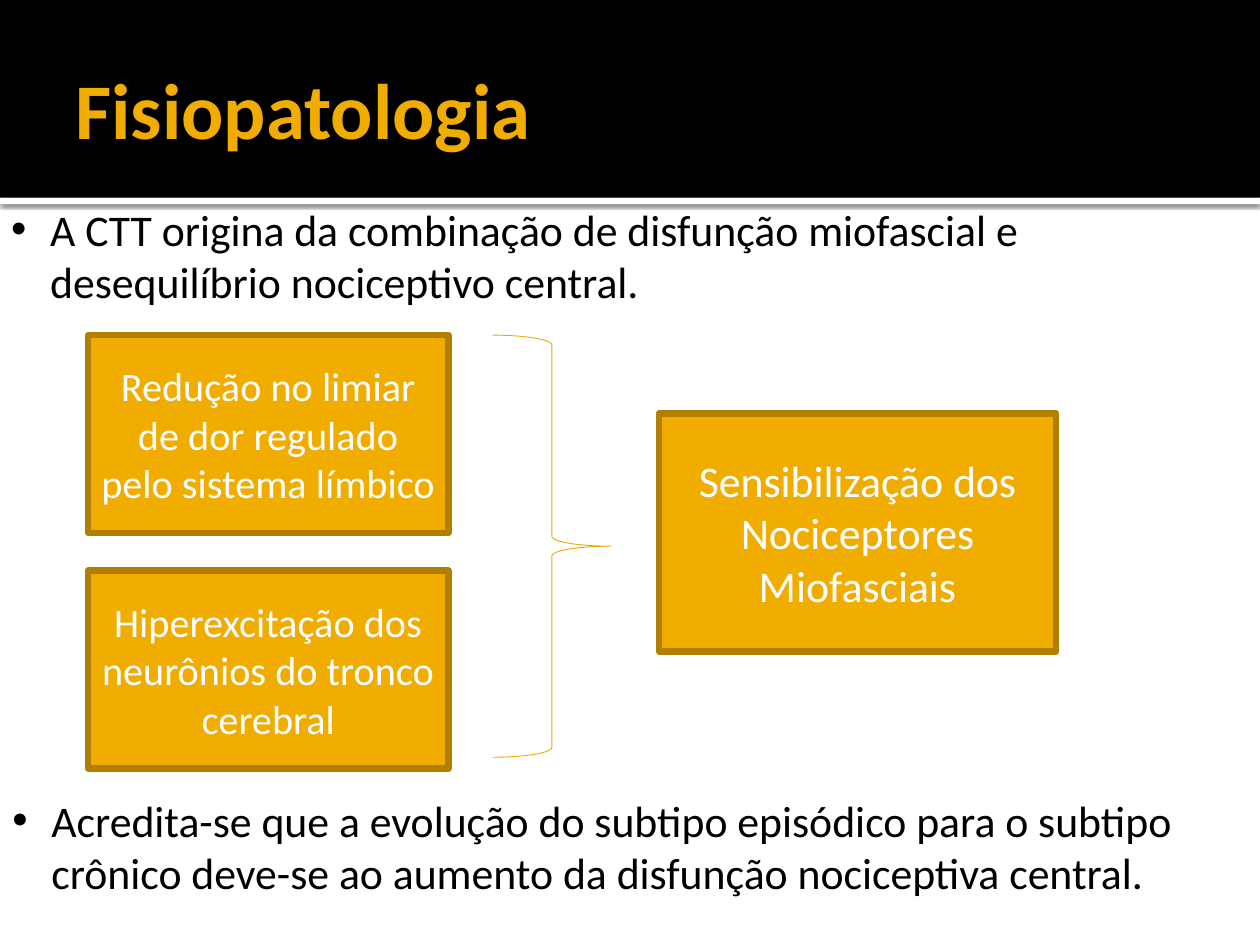
from lxml import etree
from pptx import Presentation
from pptx.dml.color import RGBColor
from pptx.enum.shapes import MSO_SHAPE as Shape
from pptx.enum.text import MSO_ANCHOR as Anchor, MSO_AUTO_SIZE as AutoSize, PP_ALIGN as Align
from pptx.oxml import parse_xml
from pptx.oxml.ns import nsdecls, qn
from pptx.util import Inches, Pt

BLACK, WHITE, GOLD = "000000", "FFFFFF", "F0AD00"
DARK_GOLD, BRACE_GOLD = "B28000", "EBA900"


def color(value):
    return RGBColor.from_string(value)


class SlideBuilder:
    """Draws styled elements on the current slide."""

    font = "Calibri"

    def __init__(self, page):
        self.page = page

    def set_text(self, shape, text, size, ink, align, bold=False):
        frame = shape.text_frame
        frame.word_wrap = True
        frame.text = text
        para = frame.paragraphs[0]
        para.alignment = align
        span = para.runs[0].font
        span.name, span.size, span.bold = self.font, Pt(size), bold
        span.color.rgb = color(ink)
        return para

    def shape(self, kind, left, top, width, height, fill=None, line=None, weight=0):
        shape = self.page.shapes.add_shape(
            kind, Inches(left), Inches(top), Inches(width), Inches(height))
        shape.shadow.inherit = False
        if fill:
            shape.fill.solid()
            shape.fill.fore_color.rgb = color(fill)
        else:
            shape.fill.background()
        if line:
            shape.line.color.rgb = color(line)
            shape.line.width = Pt(weight)
        else:
            shape.line.fill.background()
        return shape

    def header(self, height, strip):
        edge = self.shape(Shape.RECTANGLE, 0, height, 10, strip, WHITE)
        effects = edge._element.spPr.find(qn("a:effectLst"))
        effects.append(parse_xml(
            f'<a:outerShdw {nsdecls("a")} blurRad="{Pt(2.5)}" dist="{Pt(0.8)}" '
            'dir="5400000" rotWithShape="0"/>'))
        ink = etree.SubElement(effects[0], qn("a:srgbClr"), val=BLACK)
        etree.SubElement(ink, qn("a:alpha"), val="60000")
        self.shape(Shape.RECTANGLE, 0, 0, 10, height, BLACK)

    def title(self, text):
        title = self.page.shapes.title
        title.left, title.top = Inches(0.5), Inches(0.17)
        title.width, title.height = Inches(9), Inches(1.37)
        self.page.shapes._spTree.append(title._element)
        self.set_text(title, text, 45, GOLD, Align.LEFT, bold=True)
        frame = title.text_frame
        frame.auto_size = AutoSize.NONE
        frame.vertical_anchor = Anchor.MIDDLE
        frame.margin_left = Inches(0.1)
        frame.margin_right = frame.margin_top = frame.margin_bottom = Inches(0.05)

    def bullet(self, text, left, top, width, height):
        box = self.page.shapes.add_textbox(
            Inches(left), Inches(top), Inches(width), Inches(height))
        para = self.set_text(box, text, 25, BLACK, Align.LEFT)
        settings = para._p.get_or_add_pPr()
        settings.set("marL", str(Inches(0.31)))
        settings.set("indent", str(-Inches(0.31)))
        etree.SubElement(settings, qn("a:buFont"), typeface="Arial")
        etree.SubElement(settings, qn("a:buChar"), char="•")

    def card(self, text, left, top, width, height, size):
        card = self.shape(Shape.RECTANGLE, left, top, width, height, GOLD, DARK_GOLD, 3.78)
        self.set_text(card, text, size, WHITE, Align.CENTER)
        card.text_frame.vertical_anchor = Anchor.MIDDLE

    def brace(self, left, top, width, height):
        self.shape(Shape.RIGHT_BRACE, left, top, width, height, line=BRACE_GOLD, weight=0.5)


def main():
    deck = Presentation()
    deck.slide_width, deck.slide_height = Inches(10), Inches(7.5)
    slide = SlideBuilder(deck.slides.add_slide(deck.slide_layouts[5]))

    slide.header(1.57, 0.05)
    slide.title("Fisiopatologia")
    slide.bullet("A CTT origina da combinação de disfunção miofascial e "
                 "desequilíbrio nociceptivo central.", -0.01, 1.56, 10.01, 0.94)
    slide.bullet("Acredita-se que a evolução do subtipo episódico para o subtipo "
                 "crônico deve-se ao aumento da disfunção nociceptiva central.",
                 0, 6.25, 10, 1.25)

    causes = ["Redução no limiar de dor regulado pelo sistema límbico",
              "Hiperexcitação dos neurônios do tronco cerebral"]
    for index, cause in enumerate(causes):
        slide.card(cause, 0.7, 2.66 + 1.87 * index, 2.86, 1.57, 23)
    slide.card("Sensibilização dos Nociceptores Miofasciais", 5.23, 3.28, 3.15, 1.89, 25)
    slide.brace(3.91, 2.66, 0.94, 3.35)

    deck.save("out.pptx")


if __name__ == "__main__":
    main()
